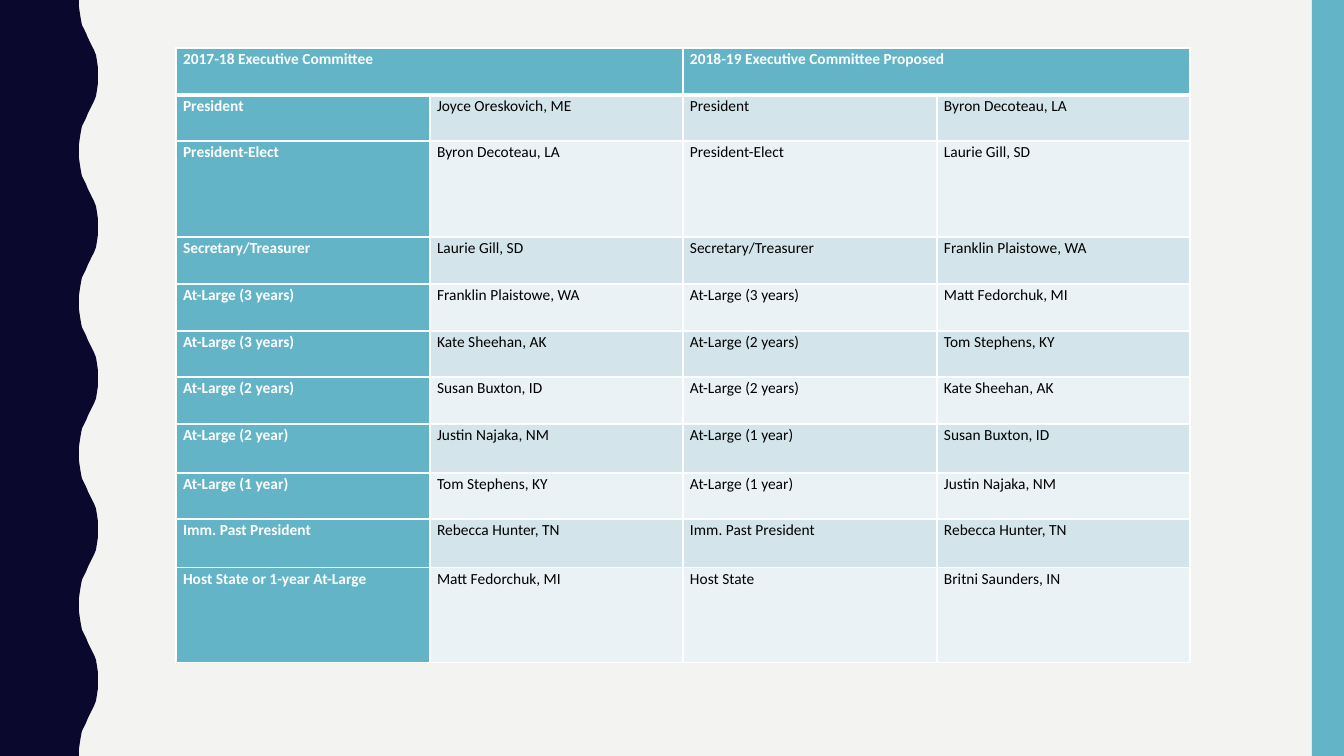
import pptx
import pptx.dml.color
import pptx.enum.shapes
import pptx.oxml
import pptx.oxml.ns
import pptx.util

EMU_PER_PX = 914400 / 100.8
SLIDE_W, SLIDE_H = 1344, 756
COLORS = {
    "background": "F3F3F2",
    "wave": "0B082E",
    "accent": "62B4C6",
    "band_dark": "D3E5EA",
    "band_light": "EAF2F5",
    "white": "FFFFFF",
    "black": "000000",
}
WAVE_COUNT = 5
# Half a wave, from its trough to the middle of its crest
HALF_WAVE = [(79, 0), (79, 7), (80, 14), (81, 20), (82, 25), (84, 29), (86, 33), (88, 38),
             (90, 42), (92, 46), (94, 50), (96, 55), (97, 61), (98, 68), (98, 75)]

TABLE_LEFT, TABLE_TOP = 176, 48
COL_WIDTHS = [254, 253, 254, 253]
ROW_HEIGHTS = [47, 46, 96, 47, 47, 46, 47, 49, 46, 49, 95]
HEADINGS = ["2017-18 Executive Committee", "2018-19 Executive Committee Proposed"]
MEMBERS = [
    ("President", "Joyce Oreskovich, ME", "President", "Byron Decoteau, LA"),
    ("President-Elect", "Byron Decoteau, LA", "President-Elect", "Laurie Gill, SD"),
    ("Secretary/Treasurer", "Laurie Gill, SD", "Secretary/Treasurer", "Franklin Plaistowe, WA"),
    ("At-Large (3 years)", "Franklin Plaistowe, WA", "At-Large (3 years)", "Matt Fedorchuk, MI"),
    ("At-Large (3 years)", "Kate Sheehan, AK", "At-Large (2 years)", "Tom Stephens, KY"),
    ("At-Large (2 years)", "Susan Buxton, ID", "At-Large (2 years)", "Kate Sheehan, AK"),
    ("At-Large (2 year)", "Justin Najaka, NM", "At-Large (1 year)", "Susan Buxton, ID"),
    ("At-Large (1 year)", "Tom Stephens, KY", "At-Large (1 year)", "Justin Najaka, NM"),
    ("Imm. Past President", "Rebecca Hunter, TN", "Imm. Past President", "Rebecca Hunter, TN"),
    ("Host State or 1-year At-Large", "Matt Fedorchuk, MI", "Host State", "Britni Saunders, IN"),
]
CELL_FORMAT = {"margin_left": pptx.util.Inches(0.07), "margin_right": pptx.util.Inches(0.07),
               "margin_top": 0, "margin_bottom": 0}
PARAGRAPH_FORMAT = {"line_spacing": 1.07, "space_after": pptx.util.Pt(8)}
FONT_FORMAT = {"name": "Calibri", "size": pptx.util.Pt(11)}


def px(length):
    return pptx.util.Emu(round(length * EMU_PER_PX))


def rgb(name):
    return pptx.dml.color.RGBColor.from_string(COLORS[name])


def set_format(target, values):
    for name, value in values.items():
        setattr(target, name, value)


def paint(fill, color):
    fill.solid()
    fill.fore_color.rgb = rgb(color)


def style_shape(sp, color):
    paint(sp.fill, color)
    sp.line.fill.background()
    sp.shadow.inherit = False


def add_wave_edge(slide):
    period = SLIDE_H / WAVE_COUNT
    wave = HALF_WAVE + [(x, period - y) for x, y in reversed(HALF_WAVE)]
    edge = [(px(x), px(i * period + y)) for i in range(WAVE_COUNT) for x, y in wave]
    builder = slide.shapes.build_freeform(0, 0)
    builder.add_line_segments(edge + [(0, px(SLIDE_H))], close=True)
    style_shape(builder.convert_to_shape(), "wave")


def add_bar(slide, left, width):
    sp = slide.shapes.add_shape(pptx.enum.shapes.MSO_SHAPE.RECTANGLE,
                                px(left), 0, px(width), px(SLIDE_H))
    style_shape(sp, "accent")


def set_borders(cell, widths):
    """Draw white borders; widths maps the sides L, R, T, B to points."""
    tc_pr = cell._tc.get_or_add_tcPr()
    for i, (side, width) in enumerate(widths.items()):
        tc_pr.insert(i, pptx.oxml.parse_xml(
            f'<a:ln{side} {pptx.oxml.ns.nsdecls("a")} w="{pptx.util.Pt(width)}">'
            f'<a:solidFill><a:srgbClr val="{COLORS["white"]}"/></a:solidFill></a:ln{side}>'))


def style_cell(cell, row, col):
    is_heading = row == 0 or col == 0
    band = "band_dark" if row % 2 else "band_light"
    set_format(cell, CELL_FORMAT)
    paint(cell.fill, "accent" if is_heading else band)
    set_borders(cell, {"L": 1, "R": 1, "T": 3 if row == 1 else 1, "B": 3 if row == 0 else 1})
    p = cell.text_frame.paragraphs[0]
    set_format(p, PARAGRAPH_FORMAT)
    for r in p.runs:
        set_format(r.font, {**FONT_FORMAT, "bold": is_heading})
        r.font.color.rgb = rgb("white" if is_heading else "black")


def add_committee_table(slide):
    rows = [(HEADINGS[0], "", HEADINGS[1], ""), *MEMBERS]
    table = slide.shapes.add_table(len(rows), len(COL_WIDTHS), px(TABLE_LEFT), px(TABLE_TOP),
                                   px(sum(COL_WIDTHS)), px(sum(ROW_HEIGHTS))).table
    for column, width in zip(table.columns, COL_WIDTHS):
        column.width = px(width)
    for table_row, height in zip(table.rows, ROW_HEIGHTS):
        table_row.height = px(height)
    for row, texts in enumerate(rows):
        for col, text in enumerate(texts):
            cell = table.cell(row, col)
            if text:
                cell.text = text
            style_cell(cell, row, col)
    for col in (0, 2):
        table.cell(0, col).merge(table.cell(0, col + 1))


def main():
    prs = pptx.Presentation()
    prs.slide_width, prs.slide_height = px(SLIDE_W), px(SLIDE_H)
    slide = prs.slides.add_slide(prs.slide_layouts[6])
    paint(slide.background.fill, "background")
    add_wave_edge(slide)
    add_bar(slide, 1312, 32)
    add_committee_table(slide)
    prs.save("out.pptx")


if __name__ == "__main__":
    main()
